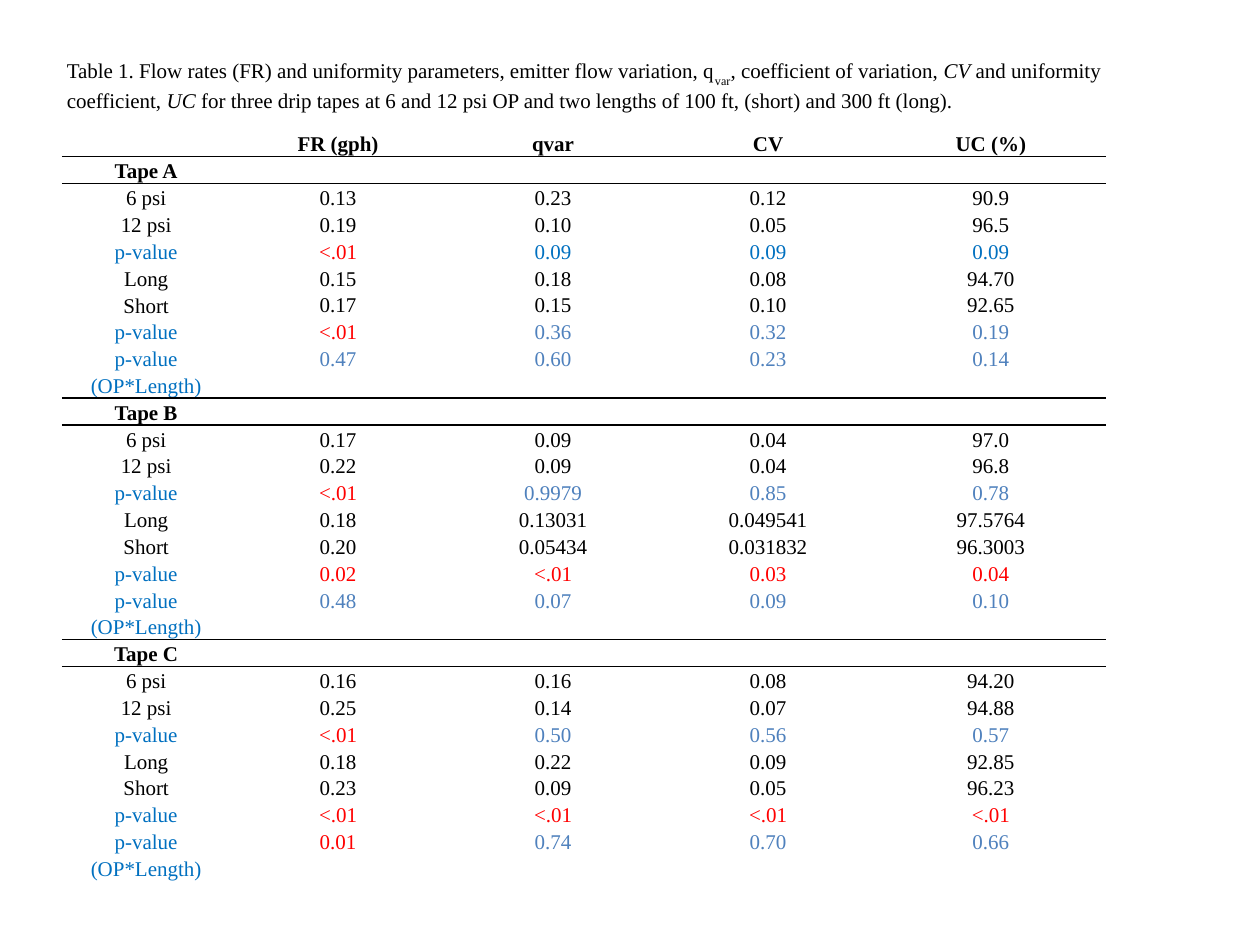
import dataclasses

import lxml.etree
import pptx
import pptx.dml.color
import pptx.enum.text
import pptx.oxml.ns
import pptx.util

Inches = pptx.util.Inches
Pt = pptx.util.Pt
ALIGN = pptx.enum.text.PP_ALIGN
ANCHOR = pptx.enum.text.MSO_ANCHOR
qn = pptx.oxml.ns.qn


@dataclasses.dataclass(frozen=True)
class Theme:
    font: str = "Times New Roman"
    size: int = 12
    rule_width: int = 1
    text: str = "000000"
    paper: str = "FFFFFF"
    label: str = "0070C0"
    plain_p: str = "4F81BD"
    significant: str = "FF0000"


THEME = Theme()
NO_STYLE = "{2D5ABB26-0587-4C30-8999-92F81FD0307C}"

CAPTION = [
    ("Table 1. Flow rates (FR) and uniformity parameters, emitter flow variation, q", {}),
    ("var", {"baseline": -30}),
    (", coefficient of variation, ", {}),
    ("CV", {"italic": True}),
    (" and uniformity coefficient, ", {}),
    ("UC", {"italic": True}),
    (" for three drip tapes at 6 and 12 psi OP and two lengths of 100 ft, "
     "(short) and 300 ft (long).", {}),
]

HEADER = ["", "FR (gph)", "qvar", "CV", "UC (%)"]
LABELS = ["6 psi", "12 psi", "p-value", "Long", "Short", "p-value", "p-value (OP*Length)"]
TAPES = {
    "Tape A": [
        ["0.13", "0.23", "0.12", "90.9"],
        ["0.19", "0.10", "0.05", "96.5"],
        ["<.01", "0.09", "0.09", "0.09"],
        ["0.15", "0.18", "0.08", "94.70"],
        ["0.17", "0.15", "0.10", "92.65"],
        ["<.01", "0.36", "0.32", "0.19"],
        ["0.47", "0.60", "0.23", "0.14"],
    ],
    "Tape B": [
        ["0.17", "0.09", "0.04", "97.0"],
        ["0.22", "0.09", "0.04", "96.8"],
        ["<.01", "0.9979", "0.85", "0.78"],
        ["0.18", "0.13031", "0.049541", "97.5764"],
        ["0.20", "0.05434", "0.031832", "96.3003"],
        ["0.02", "<.01", "0.03", "0.04"],
        ["0.48", "0.07", "0.09", "0.10"],
    ],
    "Tape C": [
        ["0.16", "0.16", "0.08", "94.20"],
        ["0.25", "0.14", "0.07", "94.88"],
        ["<.01", "0.50", "0.56", "0.57"],
        ["0.18", "0.22", "0.09", "92.85"],
        ["0.23", "0.09", "0.05", "96.23"],
        ["<.01", "<.01", "<.01", "<.01"],
        ["0.01", "0.74", "0.70", "0.66"],
    ],
}


def add_run(p, text, color=THEME.text, bold=False, italic=False, baseline=None):
    r = p.add_run()
    r.text = text
    r.font.name = THEME.font
    r.font.size = Pt(THEME.size)
    r.font.bold = bold
    r.font.italic = italic
    r.font.color.rgb = pptx.dml.color.RGBColor.from_string(color)
    if baseline is not None:
        r.font._element.set("baseline", str(baseline * 1000))


def size_empty(p):
    """Keep an empty cell from growing its row."""
    end = lxml.etree.SubElement(p._p, qn("a:endParaRPr"), sz=str(THEME.size * 100))
    lxml.etree.SubElement(end, qn("a:latin"), typeface=THEME.font)


def add_rule(cell, side):
    """Draw a rule on one side of a cell: lnT or lnB."""
    ln = lxml.etree.Element(qn("a:" + side), w=str(Pt(THEME.rule_width)))
    fill = lxml.etree.SubElement(ln, qn("a:solidFill"))
    lxml.etree.SubElement(fill, qn("a:srgbClr"), val=THEME.text)
    cell._tc.get_or_add_tcPr().insert(0, ln)


def value_color(label, value, tape):
    if not label.startswith("p-value"):
        return THEME.text
    if float(value.lstrip("<")) < 0.05:
        return THEME.significant
    # The first tape's pressure test uses the label blue
    return THEME.label if (tape, label) == ("Tape A", "p-value") and value == "0.09" else THEME.plain_p


def table_rows():
    """Yield each row as a list of (text, format) cells."""
    yield [(text, {"bold": True}) for text in HEADER]
    for tape, values in TAPES.items():
        yield [(tape, {"bold": True})] + [("", {})] * (len(HEADER) - 1)
        for label, row in zip(LABELS, values):
            color = THEME.label if label.startswith("p-value") else THEME.text
            yield [(label, {"color": color})] + [
                (v, {"color": value_color(label, v, tape)}) for v in row]


def fill_cell(cell, text, fmt, anchor):
    cell.margin_left = cell.margin_right = Inches(0.05)
    cell.margin_top = cell.margin_bottom = 0
    cell.vertical_anchor = anchor
    cell.fill.solid()
    cell.fill.fore_color.rgb = pptx.dml.color.RGBColor.from_string(THEME.paper)
    p = cell.text_frame.paragraphs[0]
    p.alignment = ALIGN.CENTER
    p.line_spacing = 1.15
    if text:
        add_run(p, text, **fmt)
    else:
        size_empty(p)


def add_caption(slide, left, top, width, height):
    sp = slide.shapes.title
    sp.left, sp.top, sp.width, sp.height = left, top, width, height
    tf = sp.text_frame
    tf.word_wrap = True
    tf.auto_size = pptx.enum.text.MSO_AUTO_SIZE.NONE
    tf.vertical_anchor = ANCHOR.TOP
    p = tf.paragraphs[0]
    p.alignment = ALIGN.LEFT
    for text, fmt in CAPTION:
        add_run(p, text, **fmt)


def add_flow_table(slide, left, top, width, height):
    rows = list(table_rows())
    table = slide.shapes.add_table(len(rows), len(HEADER), left, top, width, height).table
    table.first_row = table.horz_banding = False
    table._tbl.tblPr.find(qn("a:tableStyleId")).text = NO_STYLE

    # Outer columns take fixed widths, the middle ones share the rest
    first, last = Inches(1.34), Inches(1.83)
    middle = (width - first - last) // (len(HEADER) - 2)
    for col, w in zip(table.columns, [first] + [middle] * (len(HEADER) - 2) + [last]):
        col.width = w

    for i, row in enumerate(rows):
        table.rows[i].height = Inches(0.39 if row[0][0] == LABELS[-1] else 0.19)
        for j, (text, fmt) in enumerate(row):
            cell = table.cell(i, j)
            anchor = ANCHOR.BOTTOM if i == 0 else ANCHOR.MIDDLE if j == 0 else ANCHOR.TOP
            fill_cell(cell, text, fmt, anchor)
            # A rule above each tape
            if row[0][0] in TAPES:
                add_rule(cell, "lnT")
                add_rule(table.cell(i - 1, j), "lnB")


def main():
    prs = pptx.Presentation()
    prs.slide_width, prs.slide_height = Inches(10), Inches(7.5)
    slide = prs.slides.add_slide(prs.slide_layouts.get_by_name("Title Only"))
    add_caption(slide, Inches(0.43), Inches(0.41), Inches(9.13), Inches(0.71))
    add_flow_table(slide, Inches(0.49), Inches(1.03), Inches(8.29), Inches(5.35))
    prs.save("out.pptx")


if __name__ == "__main__":
    main()
